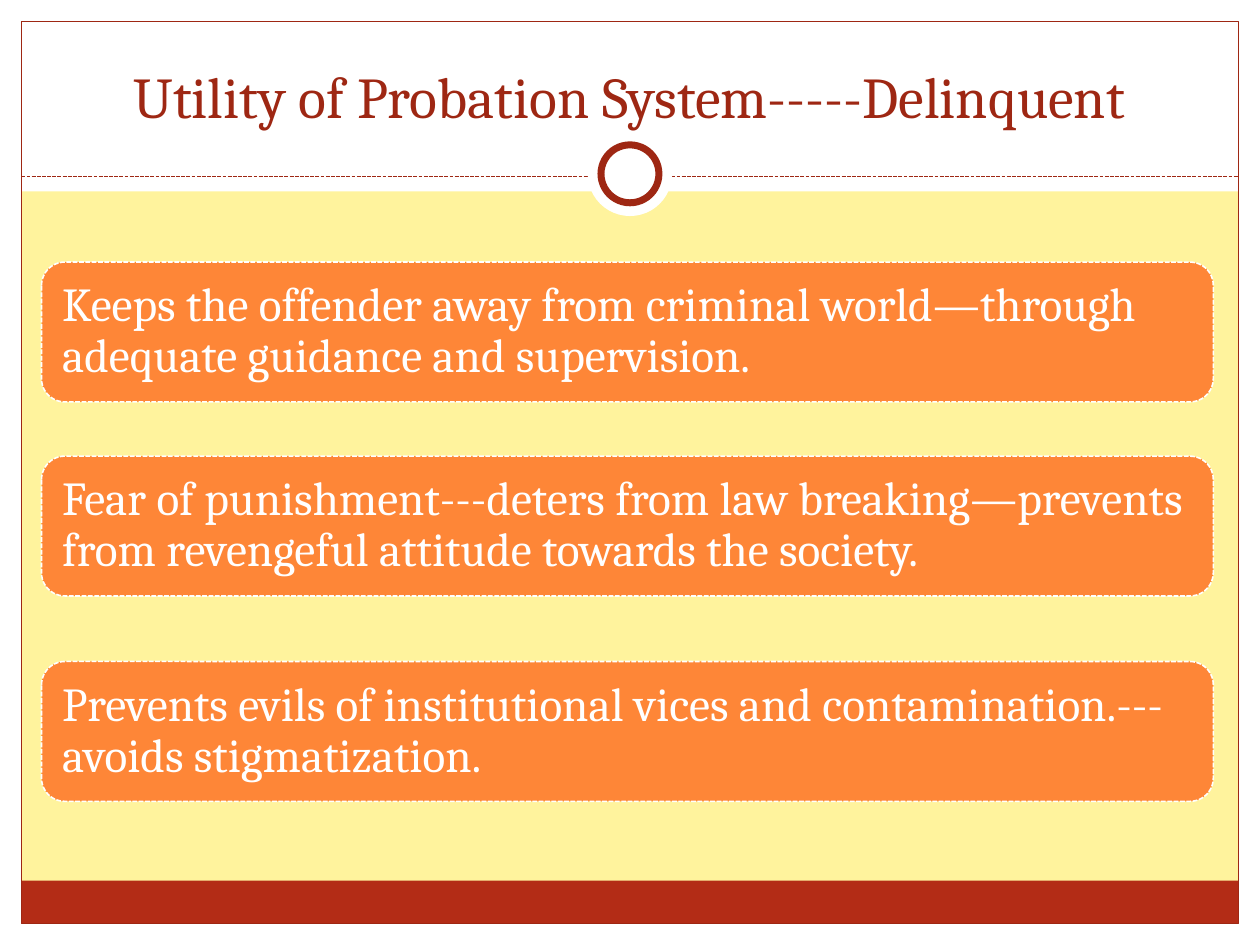
from dataclasses import dataclass

from lxml.etree import SubElement
from pptx import Presentation
from pptx.dml.color import RGBColor
from pptx.enum.dml import MSO_LINE
from pptx.enum.shapes import MSO_CONNECTOR, MSO_SHAPE
from pptx.enum.text import MSO_ANCHOR, MSO_AUTO_SIZE, PP_ALIGN
from pptx.oxml.ns import qn
from pptx.util import Inches, Pt


@dataclass(frozen=True)
class Theme:
    background: RGBColor = RGBColor.from_string("FFF39D")
    white: RGBColor = RGBColor.from_string("FFFFFF")
    accent: RGBColor = RGBColor.from_string("9E2713")
    footer: RGBColor = RGBColor.from_string("B32C16")
    card: RGBColor = RGBColor.from_string("FE8637")
    font: str = "Cambria"
    title_size: float = 33
    card_size: float = 27


THEME = Theme()
TITLE = "Utility of Probation System-----Delinquent"
CARDS = [
    (2.08, "Keeps the offender away from criminal world—through adequate guidance and supervision."),
    (3.62, "Fear of punishment---deters from law breaking—prevents from revengeful attitude towards the society."),
    (5.25, "Prevents evils of institutional vices and contamination.---avoids stigmatization."),
]


def format_line(line, color, width, dash=None):
    line.color.rgb = color
    line.width = Pt(width)
    if dash:
        line.dash_style = dash


def add_box(slide, box, preset=MSO_SHAPE.RECTANGLE, fill=None, line=None, width=0.75, dash=None):
    shape = slide.shapes.add_shape(preset, *map(Inches, box))
    shape.shadow.inherit = False
    if fill is None:
        shape.fill.background()
    else:
        shape.fill.solid()
        shape.fill.fore_color.rgb = fill
    if line is None:
        shape.line.fill.background()
    else:
        format_line(shape.line, line, width, dash)
    return shape


def write_text(shape, text, size, color, align=PP_ALIGN.LEFT, anchor=MSO_ANCHOR.MIDDLE,
               inset=None, spacing=1.0):
    frame = shape.text_frame
    frame.word_wrap = True
    frame.auto_size = MSO_AUTO_SIZE.NONE
    frame.vertical_anchor = anchor
    if inset is not None:
        frame.margin_left = frame.margin_right = Inches(inset)
        frame.margin_top = frame.margin_bottom = Inches(inset)
    paragraph = frame.paragraphs[0]
    paragraph.alignment = align
    paragraph.line_spacing = spacing
    run = paragraph.add_run()
    run.text = text
    run.font.name = THEME.font
    run.font.size = Pt(size)
    run.font.color.rgb = color


def add_frame(slide, box, header_height, footer_height):
    left, top, width, height = box
    right, bottom = left + width, top + height
    for margin in [(0, bottom, 10, 7.5 - bottom), (0, 0, 10, header_height),
                   (0, 0, left, 7.5), (right, 0, 10 - right, 7.5)]:
        add_box(slide, margin, fill=THEME.white)
    add_box(slide, (left, bottom - footer_height, width, footer_height), fill=THEME.footer)
    add_box(slide, box, line=THEME.accent)


def add_divider(slide, left, right, line_top, ring_center):
    divider = slide.shapes.add_connector(
        MSO_CONNECTOR.STRAIGHT, Inches(left), Inches(line_top), Inches(right), Inches(line_top))
    format_line(divider.line, THEME.accent, 0.75, MSO_LINE.SQUARE_DOT)
    SubElement(divider.element.spPr, qn("a:effectLst"))
    middle = (left + right) / 2
    for diameter, line in [(0.67, None), (0.46, THEME.accent)]:
        radius = diameter / 2
        add_box(slide, (middle - radius, ring_center - radius, diameter, diameter),
                MSO_SHAPE.OVAL, THEME.white, line, width=4)


def add_title(slide, box):
    title = slide.shapes.title
    title.left, title.top, title.width, title.height = map(Inches, box)
    write_text(title, TITLE, THEME.title_size, THEME.accent,
               align=PP_ALIGN.CENTER, anchor=MSO_ANCHOR.BOTTOM)
    slide.shapes.element.append(title.element)


def add_card(slide, box, text):
    card = add_box(slide, box, MSO_SHAPE.ROUNDED_RECTANGLE, THEME.card,
                   THEME.white, 0.9, MSO_LINE.SQUARE_DOT)
    write_text(card, text, THEME.card_size, THEME.white, inset=0.11, spacing=0.9)


def main():
    presentation = Presentation()
    presentation.slide_width, presentation.slide_height = Inches(10), Inches(7.5)
    slide = presentation.slides.add_slide(presentation.slide_layouts[5])
    slide.background.fill.solid()
    slide.background.fill.fore_color.rgb = THEME.background
    add_frame(slide, (0.17, 0.17, 9.66, 7.16), header_height=1.52, footer_height=0.34)
    add_divider(slide, 0.17, 9.83, line_top=1.4, ring_center=1.38)
    add_title(slide, (0.33, 0.25, 9.33, 0.83))
    for top, text in CARDS:
        add_card(slide, (0.33, top, 9.3, 1.11), text)
    presentation.save("out.pptx")


if __name__ == "__main__":
    main()
